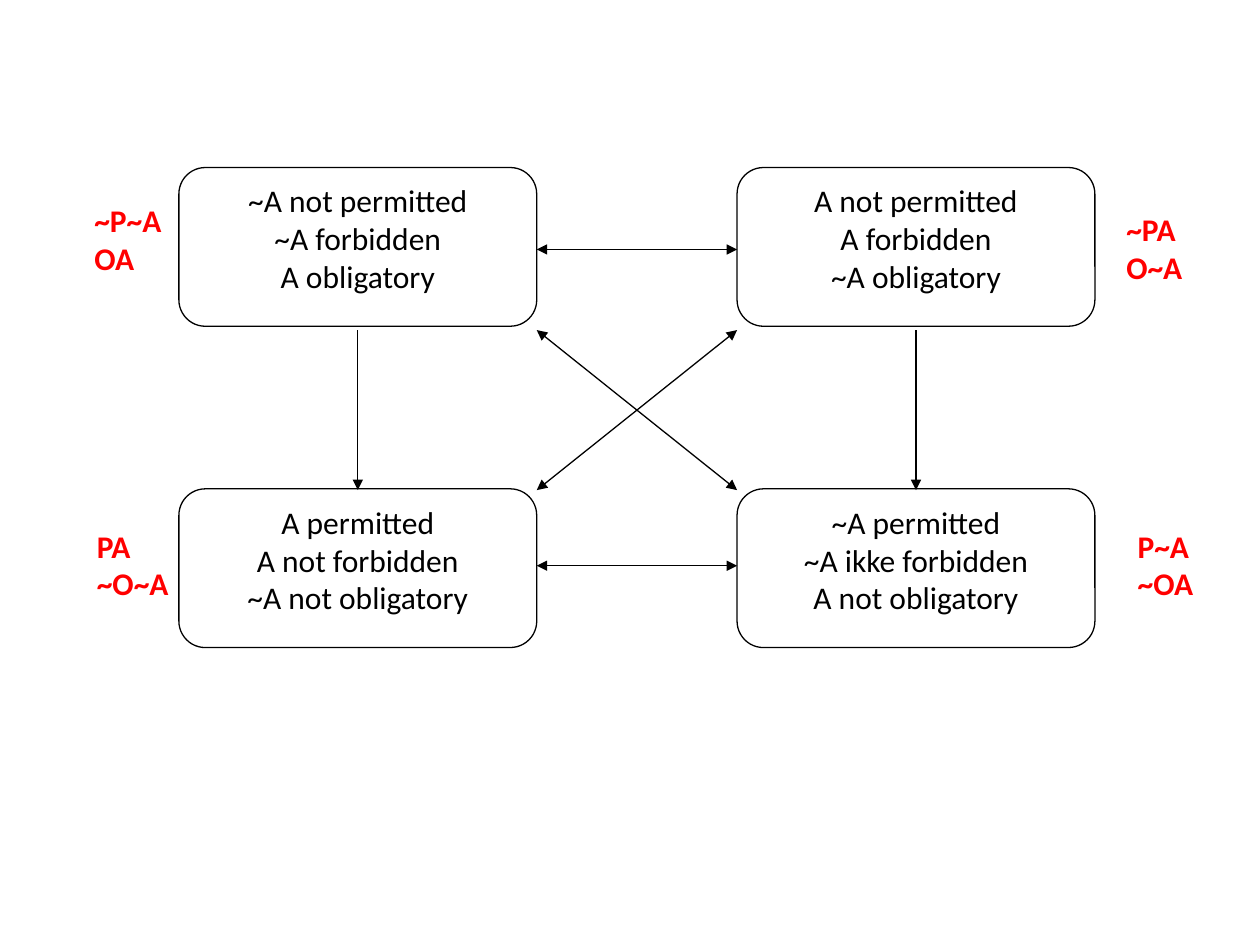
from dataclasses import dataclass
from lxml import etree
from pptx import Presentation
from pptx.dml.color import RGBColor
from pptx.enum.shapes import MSO_CONNECTOR, MSO_SHAPE
from pptx.enum.text import MSO_ANCHOR, MSO_AUTO_SIZE, PP_ALIGN
from pptx.oxml.ns import qn
from pptx.util import Inches, Pt

BOX = MSO_SHAPE.FLOWCHART_ALTERNATE_PROCESS
LINE = MSO_CONNECTOR.STRAIGHT
TOP = MSO_ANCHOR.TOP
GROW = MSO_AUTO_SIZE.SHAPE_TO_FIT_TEXT
LEFT, CENTER = PP_ALIGN.LEFT, PP_ALIGN.CENTER


@dataclass(frozen=True)
class Theme:
    ink: RGBColor = RGBColor(0, 0, 0)
    paper: RGBColor = RGBColor(255, 255, 255)
    accent: RGBColor = RGBColor(255, 0, 0)
    font: str = "Calibri"
    size: Pt = Pt(18)
    rule: Pt = Pt(0.75)


THEME = Theme()

# Square of opposition: two columns by two rows
WIDE, HIGH = 2.84, 1.26
COLS = (1.42, 5.85)
ROWS = (1.33, 3.88)
INNER = (COLS[0] + WIDE, COLS[1])
SPAN = (2.62, 3.89)
LEVELS = (1.98, 4.49)

# Column, row, lines
BOXES = [
    (0, 0, ["~A not permitted", "~A forbidden", "A obligatory"]),
    (1, 0, ["A not permitted", "A forbidden", "~A obligatory"]),
    (0, 1, ["A permitted", "A not forbidden", "~A not obligatory"]),
    (1, 1, ["~A permitted", "~A ikke forbidden", "A not obligatory"]),
]

# Left, top, width, lines
LABELS = [
    (0.65, 1.55, 0.8, ["~P~A", "OA"]),
    (0.67, 4.13, 0.84, ["PA", "~O~A"]),
    (8.84, 1.62, 0.71, ["~PA", "O~A"]),
    (8.93, 4.13, 0.71, ["P~A", "~OA"]),
]


def write(frame, lines, color, align, bold=False):
    style = {"name": THEME.font, "size": THEME.size, "bold": bold}
    for i, text in enumerate(lines):
        para = frame.paragraphs[0] if i == 0 else frame.add_paragraph()
        para.alignment = align
        run = para.add_run()
        run.text = text
        for key, value in style.items():
            setattr(run.font, key, value)
        run.font.color.rgb = color


def stroke(line):
    line.color.rgb = THEME.ink
    line.width = THEME.rule


def add_box(slide, col, row, lines):
    box = slide.shapes.add_shape(
        BOX, Inches(COLS[col]), Inches(ROWS[row]), Inches(WIDE), Inches(HIGH))
    box.shadow.inherit = False
    box.fill.solid()
    box.fill.fore_color.rgb = THEME.paper
    stroke(box.line)
    box.text_frame.vertical_anchor = TOP
    write(box.text_frame, lines, THEME.ink, CENTER)


def add_arrow(slide, start, end, ends=("headEnd", "tailEnd")):
    arrow = slide.shapes.add_connector(
        LINE, *(Inches(v) for v in (*start, *end)))
    stroke(arrow.line)
    props = arrow.element.spPr
    for tag in ends:
        etree.SubElement(props.find(qn("a:ln")), qn(f"a:{tag}"), type="triangle")
    etree.SubElement(props, qn("a:effectLst"))


def add_label(slide, left, top, width, lines):
    label = slide.shapes.add_textbox(
        Inches(left), Inches(top), Inches(width), Inches(0.7))
    label.text_frame.word_wrap = False
    label.text_frame.auto_size = GROW
    write(label.text_frame, lines, THEME.accent, LEFT, bold=True)


def main():
    deck = Presentation()
    deck.slide_width, deck.slide_height = Inches(10), Inches(7.5)
    slide = deck.slides.add_slide(deck.slide_layouts[6])

    for box in BOXES:
        add_box(slide, *box)

    # Diagonals: contradictories
    for y, end in (SPAN, SPAN[::-1]):
        add_arrow(slide, (INNER[0], y), (INNER[1], end))

    # Horizontals: contraries and subcontraries
    for y in LEVELS:
        add_arrow(slide, (INNER[0], y), (INNER[1], y))

    # Verticals: implications
    for left in COLS:
        x = left + WIDE / 2
        add_arrow(slide, (x, SPAN[0]), (x, SPAN[1]), ends=("tailEnd",))

    # Formulas beside the boxes
    for label in LABELS:
        add_label(slide, *label)

    deck.save("out.pptx")


if __name__ == "__main__":
    main()
